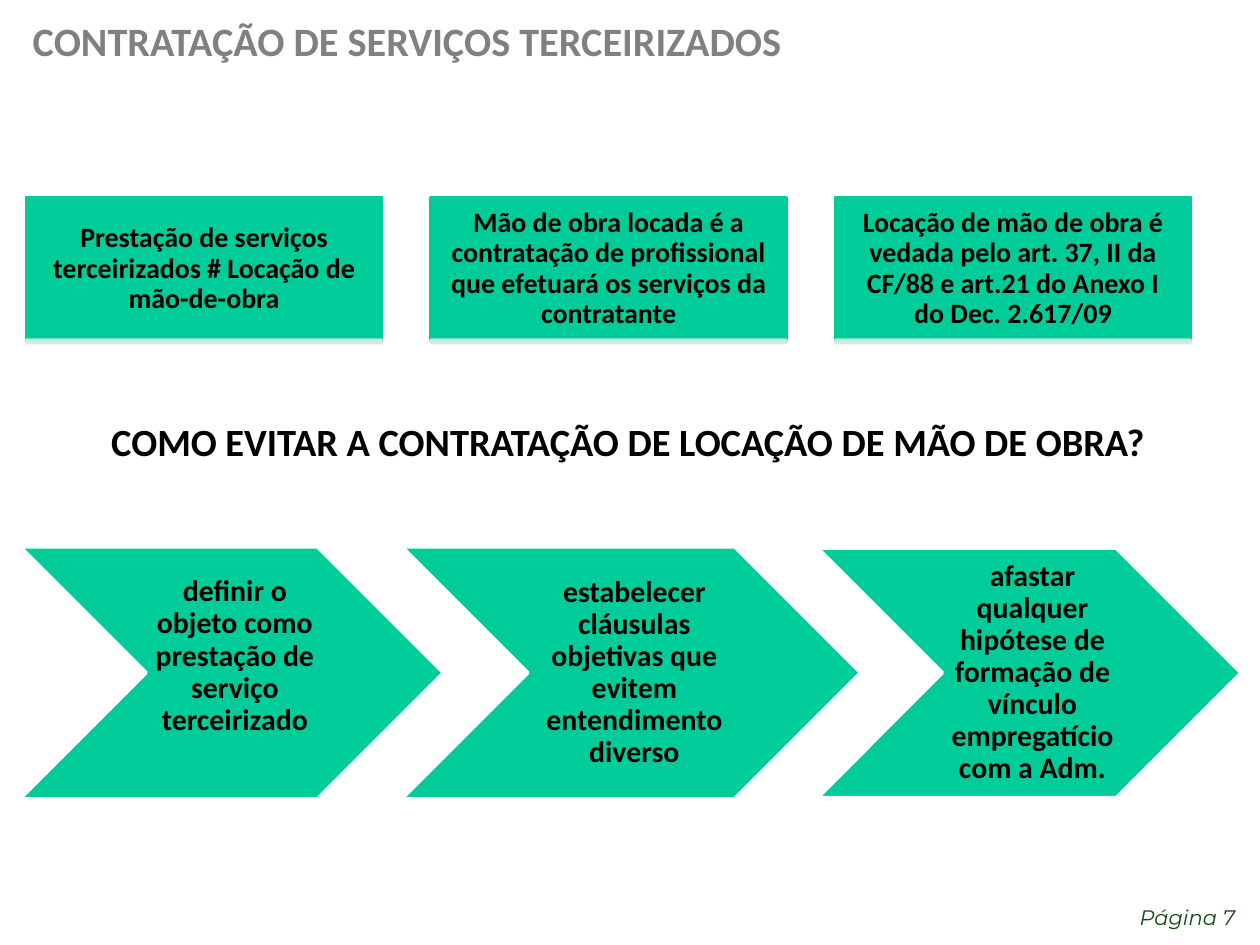
from dataclasses import dataclass

from lxml.etree import SubElement
from pptx import Presentation
from pptx.dml.color import RGBColor
from pptx.enum.shapes import MSO_SHAPE as Shape
from pptx.enum.text import MSO_ANCHOR as Anchor, PP_ALIGN as Align
from pptx.oxml.ns import qn
from pptx.util import Inches, Pt


@dataclass(frozen=True)
class Theme:
    green: str = "00CC99"
    pale_green: str = "CCECDE"
    dark_green: str = "0F4C0E"
    gray: str = "808080"
    black: str = "000000"
    white: str = "FFFFFF"
    font: str = "Calibri"
    page_font: str = "Montserrat"
    title_size: float = 23
    question_size: float = 22
    step_size: float = 17
    fact_size: float = 16
    page_size: float = 12
    line_width: float = 2
    strip_opacity: int = 90


@dataclass(frozen=True)
class Box:
    left: float
    top: float
    width: float
    height: float

    def lengths(self) -> list:
        return [Inches(n) for n in (self.left, self.top, self.width, self.height)]


@dataclass(frozen=True)
class Step:
    box: Box
    text: str
    bottom_inset: float = 0.02


THEME = Theme()
FACT_LEFT, FACT_TOP, FACT_WIDTH, FACT_HEIGHT = 0.21, 1.57, 2.82, 1.13
FACT_PITCH = 3.21
STRIP_HEIGHT = 0.02
FACTS = [
    "Prestação de serviços terceirizados # Locação de mão-de-obra",
    "Mão de obra locada é a contratação de profissional que efetuará os serviços da contratante",
    "Locação de mão de obra é vedada pelo art. 37, II da CF/88 e art.21 do Anexo I do Dec. 2.617/09",
]
STEPS = [
    Step(Box(0.16, 4.34, 3.36, 2),
         "definir o objeto como\vprestação de serviço terceirizado", 0.28),
    Step(Box(3.19, 4.34, 3.64, 2),
         "estabelecer cláusulas objetivas que evitem entendimento diverso"),
    Step(Box(6.49, 4.35, 3.36, 1.98),
         "afastar qualquer hipótese de formação de vínculo empregatício com a Adm."),
]


def write_text(shape, text: str, size: float, color: str, align: Align,
               anchor: Anchor = Anchor.TOP, font_name: str = THEME.font,
               bold: bool = True, italic: bool = False, line_spacing: float = 1.0,
               insets: tuple = (0.1, 0.05, 0.1, 0.05)) -> None:
    """Insets run left, top, right, bottom in inches."""
    frame = shape.text_frame
    frame.word_wrap = True
    frame.vertical_anchor = anchor
    (frame.margin_left, frame.margin_top,
     frame.margin_right, frame.margin_bottom) = [Inches(n) for n in insets]
    paragraph = frame.paragraphs[0]
    paragraph.text = text
    paragraph.alignment = align
    paragraph.line_spacing = line_spacing
    paragraph.space_before = Pt(0)
    font = paragraph.font
    font.name, font.size = font_name, Pt(size)
    font.bold, font.italic = bold, italic
    font.color.rgb = RGBColor.from_string(color)


def add_filled_shape(slide, kind: Shape, box: Box, fill: str, line: str):
    shape = slide.shapes.add_shape(kind, *box.lengths())
    shape.shadow.inherit = False
    shape.fill.solid()
    shape.fill.fore_color.rgb = RGBColor.from_string(fill)
    shape.line.color.rgb = RGBColor.from_string(line)
    shape.line.width = Pt(THEME.line_width)
    return shape


def set_opacity(shape, percent: int) -> None:
    """Apply the opacity to both the fill and the line."""
    for color in shape.element.spPr.iter(qn("a:srgbClr")):
        SubElement(color, qn("a:alpha"), val=str(percent * 1000))


def add_fact(slide, index: int, text: str) -> None:
    left = FACT_LEFT + index * FACT_PITCH
    tile = add_filled_shape(slide, Shape.RECTANGLE,
                            Box(left, FACT_TOP, FACT_WIDTH, FACT_HEIGHT),
                            THEME.green, THEME.green)
    write_text(tile, text, THEME.fact_size, THEME.black, Align.CENTER, Anchor.MIDDLE,
               line_spacing=0.9, insets=(0.12, 0.07, 0.12, 0.07))
    strip = add_filled_shape(slide, Shape.RECTANGLE,
                             Box(left, FACT_TOP + FACT_HEIGHT, FACT_WIDTH, STRIP_HEIGHT),
                             THEME.pale_green, THEME.pale_green)
    set_opacity(strip, THEME.strip_opacity)


def add_step(slide, step: Step) -> None:
    chevron = add_filled_shape(slide, Shape.CHEVRON, step.box, THEME.green, THEME.white)
    write_text(chevron, step.text, THEME.step_size, THEME.black, Align.CENTER,
               Anchor.MIDDLE, line_spacing=0.9,
               insets=(0.07, 0.02, 0.02, step.bottom_inset))


def main() -> None:
    presentation = Presentation()
    presentation.slide_width, presentation.slide_height = Inches(10), Inches(7.5)
    slide = presentation.slides.add_slide(presentation.slide_layouts[5])

    title = slide.shapes.title
    title.left, title.top, title.width, title.height = Box(0.16, 0.08, 8.52, 0.55).lengths()
    write_text(title, "CONTRATAÇÃO DE SERVIÇOS TERCEIRIZADOS",
               THEME.title_size, THEME.gray, Align.LEFT)

    for index, text in enumerate(FACTS):
        add_fact(slide, index, text)

    question = slide.shapes.add_textbox(*Box(0.31, 3.27, 9.35, 0.79).lengths())
    write_text(question, "COMO EVITAR A CONTRATAÇÃO DE LOCAÇÃO DE MÃO DE OBRA?",
               THEME.question_size, THEME.black, Align.CENTER)

    for step in STEPS:
        add_step(slide, step)

    page = slide.shapes.add_textbox(*Box(8.33, 7.09, 1.57, 0.32).lengths())
    write_text(page, "Página 7", THEME.page_size, THEME.dark_green, Align.RIGHT,
               font_name=THEME.page_font, bold=False, italic=True, line_spacing=1.2)

    presentation.save("out.pptx")


if __name__ == "__main__":
    main()
